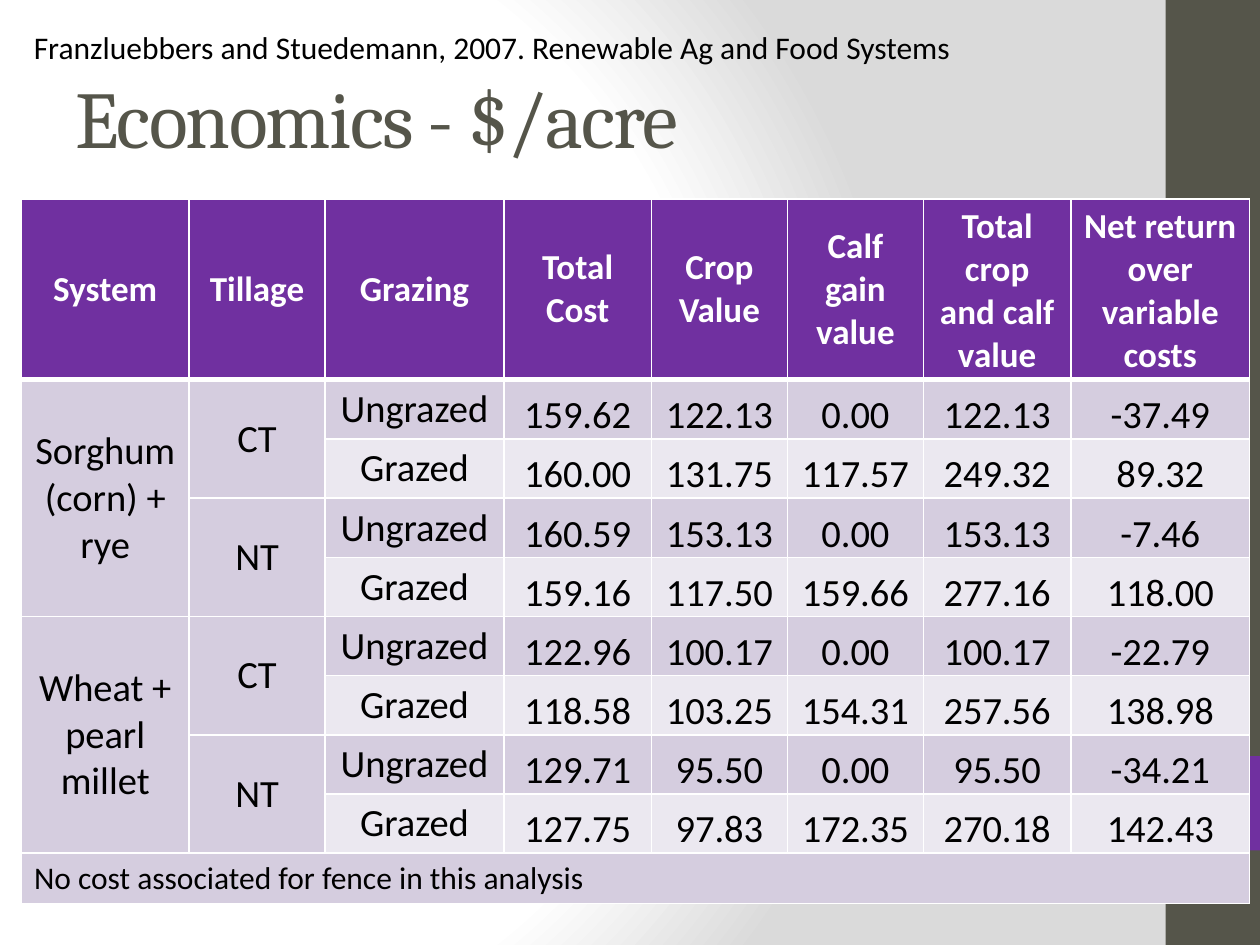
from pptx import Presentation
from pptx.dml.color import RGBColor as Rgb
from pptx.enum.shapes import MSO_SHAPE as Shape
from pptx.enum.text import MSO_ANCHOR as Anchor, MSO_AUTO_SIZE as Fit, PP_ALIGN as Align
from pptx.oxml import parse_xml
from pptx.oxml.ns import nsdecls
from pptx.util import Inches, Pt

BLACK, WHITE, OLIVE, PURPLE = "000000", "FFFFFF", "55554A", "7030A0"
DARK, PALE = "D5CDDF", "EBE8F0"
HEADS = ["System", "Tillage", "Grazing", "Total Cost", "Crop Value",
         "Calf gain value", "Total crop and calf value",
         "Net return over variable costs"]
CROPS = ["Sorghum (corn) + rye", "Wheat + pearl millet"]
TILLS = ["CT", "NT"]
MODES = ["Ungrazed", "Grazed"]
COSTS = [
    ["159.62", "122.13", "0.00", "122.13", "-37.49"],
    ["160.00", "131.75", "117.57", "249.32", "89.32"],
    ["160.59", "153.13", "0.00", "153.13", "-7.46"],
    ["159.16", "117.50", "159.66", "277.16", "118.00"],
    ["122.96", "100.17", "0.00", "100.17", "-22.79"],
    ["118.58", "103.25", "154.31", "257.56", "138.98"],
    ["129.71", "95.50", "0.00", "95.50", "-34.21"],
    ["127.75", "97.83", "172.35", "270.18", "142.43"],
]
NOTE = "No cost associated for fence in this analysis"
WIDTHS = [1.33, 1.08, 1.42, 1.17, 1.08, 1.08, 1.17, 1.42]
HEIGHTS = [1.43] + [0.47] * len(COSTS) + [0.4]


def tint(code):
    return Rgb.from_string(code)


def place(left, top, width, height):
    return [Inches(n) for n in (left, top, width, height)]


class Deck:
    """Holds the text style and the current slide."""

    font = {"name": "Calibri", "size": Pt(22), "bold": False}
    inset = {"margin_left": Inches(0.01), "margin_right": Inches(0.01),
             "margin_top": Inches(0.01), "margin_bottom": 0}

    def __init__(self, show):
        self.slide = show.slides.add_slide(show.slide_layouts[5])

    def text(self, frame, words, color=BLACK, align=Align.LEFT, **extra):
        para = frame.paragraphs[0]
        para.alignment = align
        run = para.add_run()
        run.text = words
        for key, value in {**self.font, **extra}.items():
            setattr(run.font, key, value)
        run.font.color.rgb = tint(color)
        return run

    def backdrop(self, stops):
        marks = "".join(f'<a:gs pos="{pos * 1000}"><a:srgbClr val="{code}"/></a:gs>'
                        for pos, code in stops)
        self.slide.element.cSld.insert(0, parse_xml(
            f'<p:bg {nsdecls("p", "a")}><p:bgPr><a:gradFill rotWithShape="1">'
            f'<a:gsLst>{marks}</a:gsLst><a:path path="circle">'
            '<a:fillToRect l="20000" t="50000" r="100000" b="50000"/></a:path>'
            '</a:gradFill><a:effectLst/></p:bgPr></p:bg>'))

    def block(self, box, color):
        shape = self.slide.shapes.add_shape(Shape.RECTANGLE, *place(*box))
        shape.shadow.inherit = False
        shape.fill.solid()
        shape.fill.fore_color.rgb = tint(color)
        shape.line.fill.background()

    def title(self, box, words):
        head = self.slide.shapes.title
        head.left, head.top, head.width, head.height = place(*box)
        frame = head.text_frame
        frame.auto_size = Fit.NONE
        frame.vertical_anchor = Anchor.MIDDLE
        run = self.text(frame, words, OLIVE, name="Cambria", size=Pt(46))
        run.font._element.set("spc", "-100")

    def label(self, box, words):
        frame = self.slide.shapes.add_textbox(*place(*box)).text_frame
        frame.word_wrap = True
        frame.auto_size = Fit.SHAPE_TO_FIT_TEXT
        self.text(frame, words, size=Pt(18))

    def edge(self, cell, **sides):
        props = cell._tc.get_or_add_tcPr()
        for side, size in sides.items():
            props.append(parse_xml(
                f'<a:ln{side} {nsdecls("a")} w="{Pt(size)}"><a:solidFill>'
                f'<a:srgbClr val="{WHITE}"/></a:solidFill></a:ln{side}>'))

    def cell(self, cell, words, fill, color=BLACK, align=Align.CENTER, **extra):
        cell.vertical_anchor = Anchor.MIDDLE
        self.text(cell.text_frame, words, color, align, **extra)
        cell.fill.solid()
        cell.fill.fore_color.rgb = tint(fill)

    def table(self, left, top):
        box = place(left, top, sum(WIDTHS), sum(HEIGHTS))
        grid = self.slide.shapes.add_table(len(HEIGHTS), len(WIDTHS), *box).table
        for col, width in zip(grid.columns, WIDTHS):
            col.width = Inches(width)
        for row, height in zip(grid.rows, HEIGHTS):
            row.height = Inches(height)
        for col, words in enumerate(HEADS):
            head = grid.cell(0, col)
            self.edge(head, L=1, R=1, T=1, B=3)
            self.cell(head, words, PURPLE, WHITE, size=Pt(20), bold=True)
        for row, costs in enumerate(COSTS, 1):
            fill = DARK if row % 2 else PALE
            self.cell(grid.cell(row, 2), MODES[(row - 1) % 2], fill)
            for col, words in enumerate(costs, 3):
                cost = grid.cell(row, col)
                self.cell(cost, words, fill)
                cost.vertical_anchor = Anchor.BOTTOM
                for key, value in self.inset.items():
                    setattr(cost, key, value)
        for col, step, names in ((0, 4, CROPS), (1, 2, TILLS * 2)):
            for spot, words in enumerate(names):
                row = 1 + spot * step
                grid.cell(row, col).merge(grid.cell(row + step - 1, col))
                self.cell(grid.cell(row, col), words, DARK)
        last = len(HEIGHTS) - 1
        foot = grid.cell(last, 0)
        foot.merge(grid.cell(last, len(WIDTHS) - 1))
        self.cell(foot, NOTE, DARK, align=Align.LEFT, size=Pt(18))
        foot.vertical_anchor = Anchor.TOP


def main():
    show = Presentation()
    show.slide_width, show.slide_height = Inches(10), Inches(7.5)
    deck = Deck(show)
    deck.backdrop([(0, WHITE), (75, WHITE), (100, "DADADA")])
    deck.block((9.25, 0, 0.75, 7.5), OLIVE)
    deck.block((9.25, 6, 0.75, 0.75), PURPLE)
    deck.title((0.5, 0.3, 8.33, 1.25), "Economics - $/acre")
    deck.label((0.17, 0.17, 9.5, 0.4),
               "Franzluebbers and Stuedemann, 2007. Renewable Ag and Food Systems")
    deck.table(0.17, 1.58)
    show.save("out.pptx")


if __name__ == "__main__":
    main()
